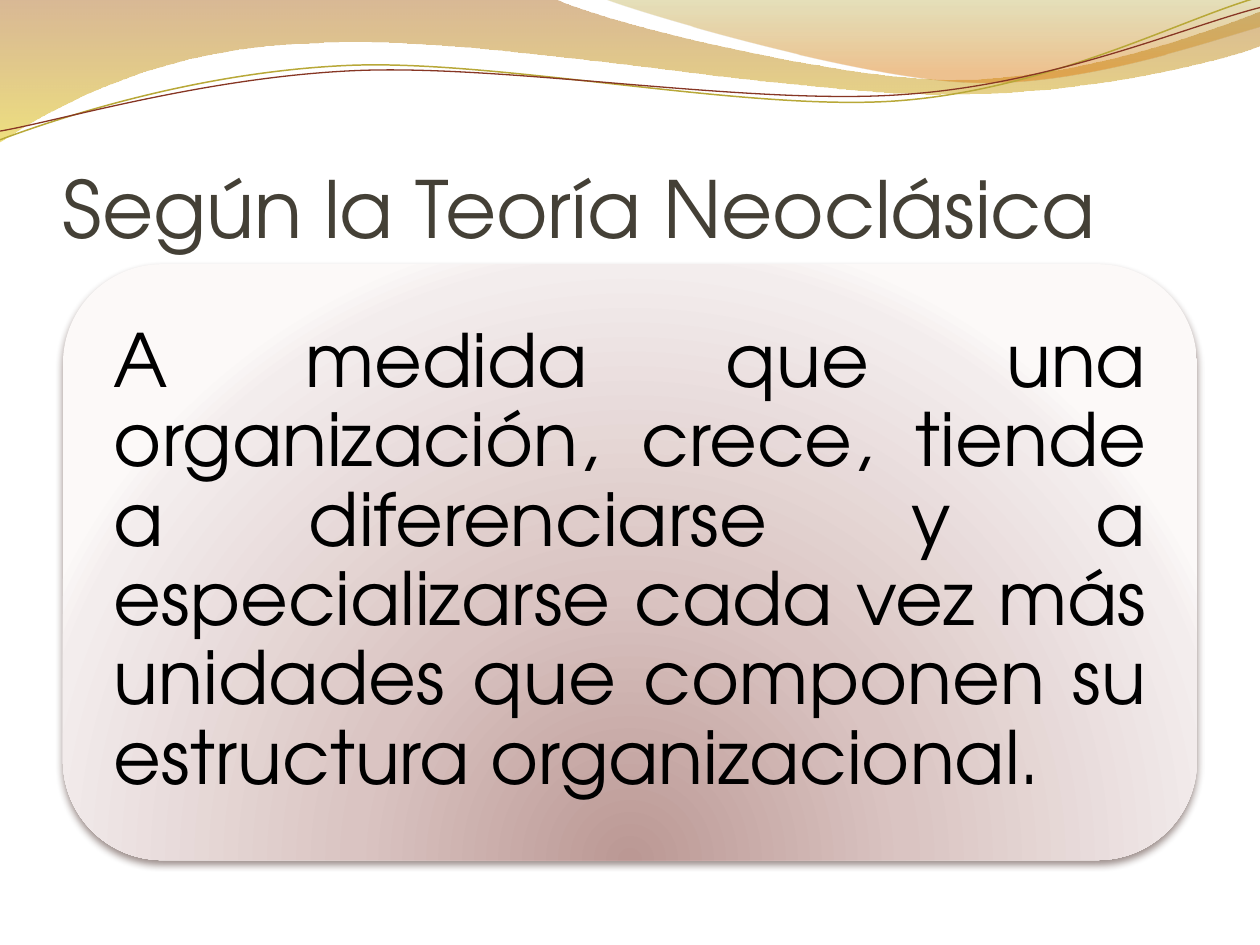
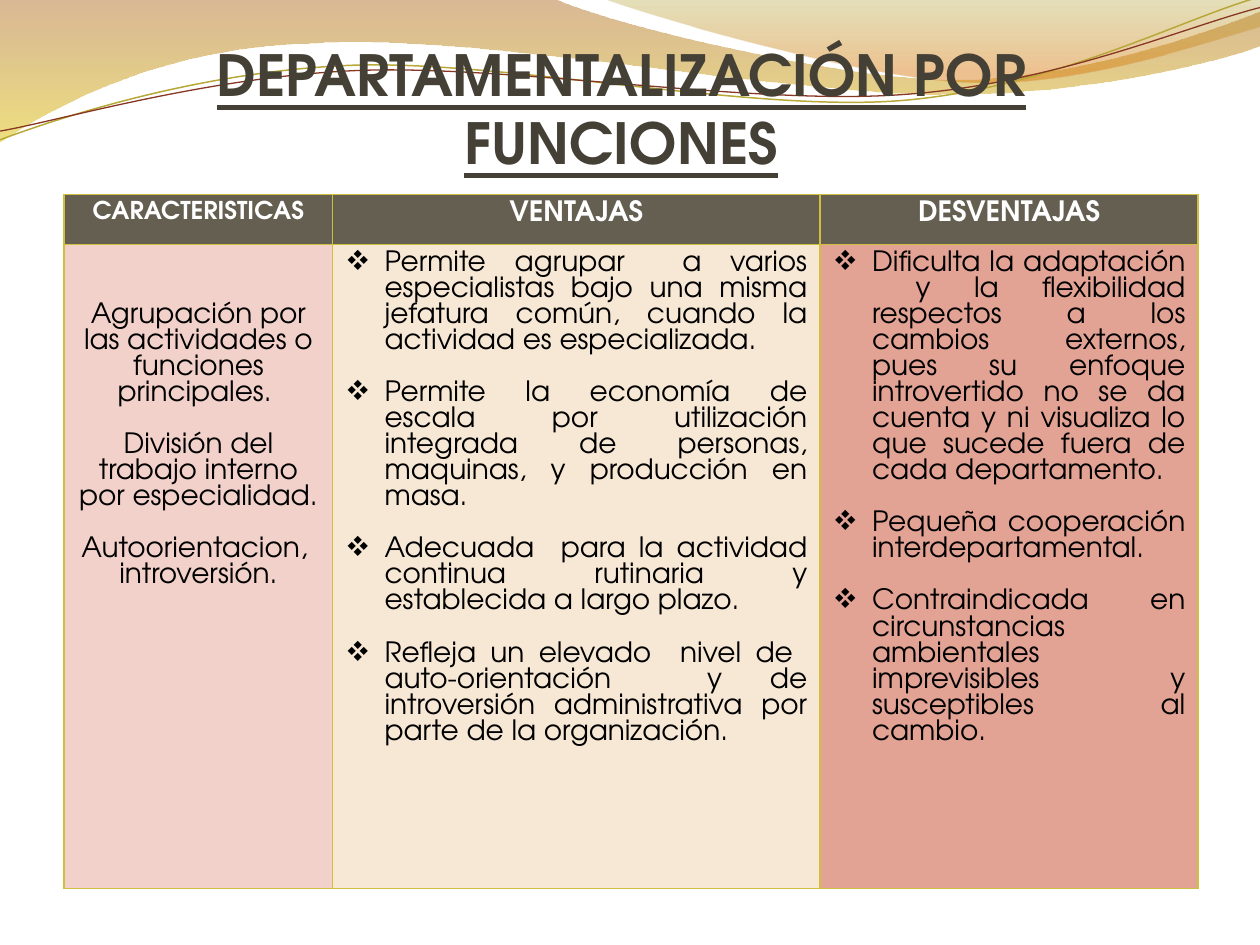
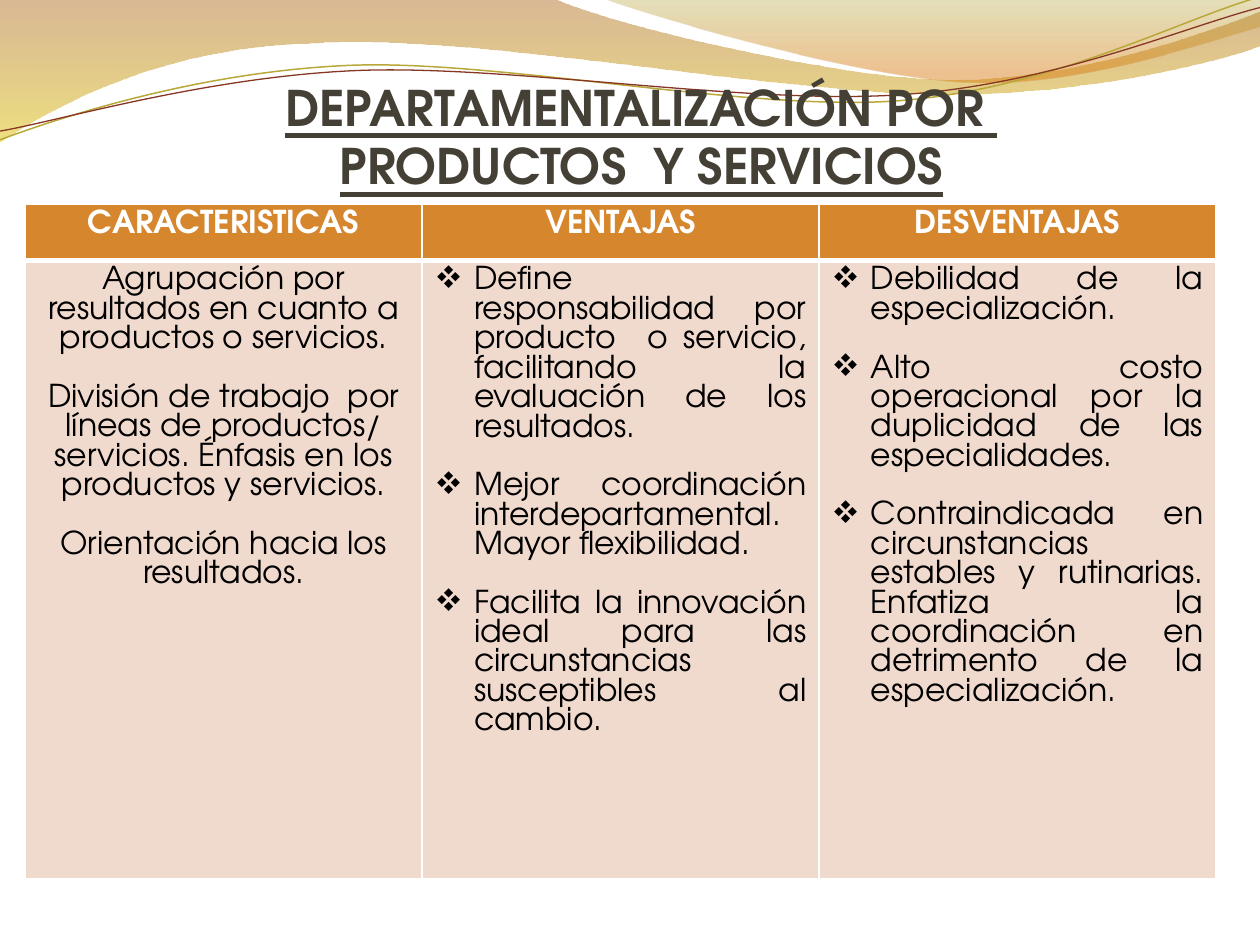
from lxml import etree
from pptx import Presentation
from pptx.dml.color import RGBColor
from pptx.enum import shapes, text
from pptx.oxml import ns
from pptx.util import Pt

FONT = "TeX Gyre Adventor"
COLORS = {
    "title": "444036", "body": "000000", "white": "FFFFFF",
    "wave_top": "AB6415", "wave_bottom": "E1C716",
    "crest_top": "AA991F", "crest_bottom": "DB780A",
    "gold_line": "B8A838", "red_line": "873624",
    "card_core": "BB9894", "card_mid": "DAC4C2",
    "card_pale": "F3EDED", "card_edge": "FCF9F8", "card_shadow": "30120C",
    "olive": "655F51", "olive_grid": "D0BE40",
    "pink": "F1D1C9", "cream": "F7E7D5", "coral": "E2A294",
    "orange": "D6862D", "peach": "F0D9CD",
}
CENTER, JUSTIFY = text.PP_ALIGN.CENTER, text.PP_ALIGN.JUSTIFY
BLANK_LINE = 0.93   # height of one table line, as a share of the font size
BULLET_INDENT = 22.5

# Wave outlines in points: a start, then line ends (2 numbers) or curves (6)
WAVE = [(0, 0), (316.8, -0.7),
        (342.7, 12.2, 478.1, 45.4, 545.8, 45.4),
        (614.2, 45.4, 689.8, 18.7, 720, 6.5), (720.7, 25.9),
        (707.8, 31.7, 626.4, 54.7, 537.1, 54),
        (447.8, 54, 275, 20.2, 185, 24.5),
        (92.9, 25.9, 33.1, 59.8, -0.7, 81.4)]
CREST = [(344.9, -0.7), (366.5, 7.9, 491, 44.6, 553.7, 46.8),
         (616.3, 49.7, 691.9, 23, 720, 15.1), (720, 0)]
GOLD_LINE = [(0, 79.9), (34.6, 67, 113.8, 41, 199.4, 37.4),
             (284.4, 33.8, 427, 64.1, 513.4, 57.6),
             (599.8, 51.1, 675.4, 10.8, 718.6, -1.4)]
RED_LINE = [(0, 74.9), (33.8, 69.1, 118.1, 43.9, 203.8, 40.3),
            (290.2, 36.7, 429.8, 60.5, 516.2, 54),
            (601.9, 48.2, 677.5, 15.1, 720, 4.3)]


def rgb(name):
    return RGBColor.from_string(COLORS[name])


def add_xml(parent, tag, **attributes):
    child = etree.SubElement(parent, ns.qn(tag))
    for key, value in attributes.items():
        child.set(key, str(value))
    return child


def add_color(parent, name, alpha=100):
    color = add_xml(parent, "a:srgbClr", val=COLORS[name])
    if alpha < 100:
        add_xml(color, "a:alpha", val=alpha * 1000)


def gradient_fill(shape, stops, center=None):
    """Fill from top to bottom, or outwards from a center (l, t, r, b)."""
    shape.fill.background()
    properties = shape._element.spPr
    gradient = etree.Element(ns.qn("a:gradFill"), rotWithShape="1")
    stop_list = add_xml(gradient, "a:gsLst")
    for position, color, alpha in stops:
        stop = add_xml(stop_list, "a:gs", pos=position * 1000)
        add_color(stop, color, alpha)
    if center:
        circle = add_xml(gradient, "a:path", path="circle")
        sides = {side: share * 1000 for side, share in zip("ltrb", center)}
        add_xml(circle, "a:fillToRect", **sides)
    else:
        add_xml(gradient, "a:lin", ang=5400000, scaled=0)
    properties.replace(properties.find(ns.qn("a:noFill")), gradient)


def add_outline(slide, outline, closed):
    """Build a freeform, then join each three curve points into a Bézier."""
    points = [(Pt(part[i]), Pt(part[i + 1]))
              for part in outline for i in range(0, len(part), 2)]
    builder = slide.shapes.build_freeform(*points[0])
    builder.add_line_segments(points[1:], close=closed)
    shape = builder.convert_to_shape()
    shape.shadow.inherit = False

    lines = iter(list(shape._element.spPr.iter(ns.qn("a:lnTo"))))
    for part in outline[1:]:
        ends = [next(lines) for _ in range(len(part) // 2)]
        if len(ends) == 3:
            curve = etree.Element(ns.qn("a:cubicBezTo"))
            ends[0].addprevious(curve)
            for end in ends:
                curve.append(end[0])
                end.getparent().remove(end)
    return shape


def add_waves(slide):
    """The band of waves at the top of each slide."""
    bands = ((WAVE, [(0, "wave_top", 45), (100, "wave_bottom", 55)]),
             (CREST, [(0, "crest_top", 30), (80, "crest_bottom", 45)]))
    for outline, stops in bands:
        band = add_outline(slide, outline, True)
        gradient_fill(band, stops)
        band.line.fill.background()
    for outline, color, width in ((GOLD_LINE, "gold_line", 0.85),
                                  (RED_LINE, "red_line", 0.75)):
        ripple = add_outline(slide, outline, False)
        ripple.fill.background()
        ripple.line.color.rgb = rgb(color)
        ripple.line.width = Pt(width)


def style(paragraph, size, color, bold=False, align=None):
    font = paragraph.font
    font.name, font.size, font.bold = FONT, Pt(size), bold
    font.color.rgb = rgb(color)
    paragraph.alignment = align


def add_text(slide, box, words, anchor, insets):
    frame = slide.shapes.add_textbox(*map(Pt, box)).text_frame
    frame.word_wrap = True
    frame.vertical_anchor = anchor
    (frame.margin_left, frame.margin_top,
     frame.margin_right, frame.margin_bottom) = map(Pt, insets)
    frame.text = words
    return frame.paragraphs[0]


def add_title(slide, left, top, words, size, heading=False, bottom=0):
    title = add_text(slide, (left, top, 648, 90), words,
                     text.MSO_ANCHOR.BOTTOM, (0, 3.6, 0, bottom))
    style(title, size, "title", heading, CENTER if heading else None)
    title.font.underline = heading


def add_card(slide, words):
    card = slide.shapes.add_shape(shapes.MSO_SHAPE.ROUNDED_RECTANGLE,
                                  Pt(36), Pt(151), Pt(648), Pt(340.5))
    gradient_fill(card, [(0, "card_core", 100), (43, "card_mid", 100),
                         (93, "card_pale", 100), (100, "card_edge", 100)],
                  center=(50, 130, 50, -30))
    card.line.fill.background()
    card.shadow.inherit = False
    effects = card._element.spPr.find(ns.qn("a:effectLst"))
    shadow = add_xml(effects, "a:outerShdw", blurRad=Pt(4.5), dist=Pt(3),
                     dir=5400000, rotWithShape=0)
    add_color(shadow, "card_shadow", 48)

    statement = add_text(slide, (52.6, 167.4, 614.9, 307.4), words,
                         text.MSO_ANCHOR.MIDDLE, [12.5] * 4)
    style(statement, 42, "body", align=JUSTIFY)
    statement.line_spacing = 0.9


def set_borders(cell, color, widths):
    properties = cell._tc.get_or_add_tcPr()
    for index, (side, width) in enumerate(zip("LRTB", widths)):
        line = add_xml(properties, f"a:ln{side}", w=Pt(width))
        add_color(add_xml(line, "a:solidFill"), color)
        properties.insert(index, line)


def add_bullet(paragraph):
    properties = paragraph._p.get_or_add_pPr()
    properties.set("marL", str(Pt(BULLET_INDENT)))
    properties.set("indent", str(-Pt(BULLET_INDENT)))
    # Wingdings draws this letter as ❖
    bullet_font = etree.Element(ns.qn("a:buFont"), typeface="Wingdings",
                                charset="2")
    properties.append(bullet_font)
    add_xml(properties, "a:buChar", char="v")


def fill_cell(cell, items, size, color, bold, bulleted):
    frame = cell.text_frame
    for index, item in enumerate(items):
        paragraph = frame.add_paragraph() if index else frame.paragraphs[0]
        paragraph.text = item
        style(paragraph, size, color, bold, JUSTIFY if bulleted else CENTER)
        if index < len(items) - 1:
            paragraph.space_after = Pt(round(size * BLANK_LINE, 1))
        if bulleted:
            add_bullet(paragraph)


def add_comparison(slide, corner, widths, heights, columns, size, header_sizes,
                   header_fill, body_fills, grid, rule=1):
    """Features, advantages and drawbacks, one column each."""
    frame = slide.shapes.add_table(2, len(columns), *map(Pt, corner),
                                   Pt(sum(widths)), Pt(sum(heights)))
    table = frame.table
    table.first_row = table.horz_banding = False
    for row, height in zip(table.rows, heights):
        row.height = Pt(height)
    headings = ("CARACTERISTICAS", "VENTAJAS", "DESVENTAJAS")
    for index, items in enumerate(columns):
        table.columns[index].width = Pt(widths[index])
        header, body = table.cell(0, index), table.cell(1, index)
        fill_cell(header, [headings[index]], header_sizes[index],
                  "white", True, False)
        fill_cell(body, items, size, "body", False, index > 0)
        for cell, fill, borders in (
                (header, header_fill, (1, 1, 1, rule)),
                (body, body_fills[index], (1, 1, rule, 1))):
            cell.fill.solid()
            cell.fill.fore_color.rgb = rgb(fill)
            set_borders(cell, grid, borders)
    return table


FUNCTIONS = [
    ["Agrupación por las actividades o funciones principales. ",
     "División del trabajo interno por especialidad.",
     "Autoorientacion,  introversión."],
    ["Permite agrupar  a varios especialistas bajo una misma jefatura común, "
     "cuando la actividad es especializada.",
     "Permite la economía de escala por utilización integrada de personas, "
     "maquinas, y producción en masa.",
     "Adecuada  para la actividad continua rutinaria y establecida a largo "
     "plazo.",
     "Refleja un elevado  nivel de  auto-orientación  y de introversión "
     "administrativa por parte de la organización."],
    ["Dificulta la adaptación  y la flexibilidad respectos a los cambios  "
     "externos, pues su enfoque introvertido no se da cuenta y ni visualiza "
     "lo que sucede fuera de cada departamento.",
     "Pequeña cooperación interdepartamental.",
     "Contraindicada en circunstancias ambientales imprevisibles y "
     "susceptibles al cambio."],
]
PRODUCTS = [
    ["Agrupación por resultados en cuanto a productos o servicios.",
     "División de trabajo  por líneas de productos/ servicios. Énfasis en los "
     "productos y servicios.",
     "Orientación hacia los resultados."],
    ["Define responsabilidad por producto  o servicio, facilitando la "
     "evaluación de los resultados.",
     "Mejor  coordinación interdepartamental. Mayor flexibilidad.",
     "Facilita la innovación ideal para las circunstancias susceptibles al "
     "cambio."],
    ["Debilidad de la especialización.",
     "Alto costo operacional por la duplicidad de las especialidades.",
     "Contraindicada en circunstancias estables y rutinarias. Enfatiza la "
     "coordinación en detrimento de la especialización."],
]


def main():
    deck = Presentation()
    deck.slide_width, deck.slide_height = Pt(720), Pt(540)
    theory, functions, products = (
        deck.slides.add_slide(deck.slide_layouts[6]) for _ in range(3))
    for slide in (theory, functions, products):
        add_waves(slide)

    # Neoclassical theory
    add_title(theory, 36, 55.4, "Según la Teoría Neoclásica", 45)
    add_card(theory, "A medida que una organización, crece, tiende a "
             "diferenciarse y a especializarse cada vez más unidades que "
             "componen su estructura organizacional.")

    # Departments by function
    add_title(functions, 31, 49.7, "DEPARTAMENTALIZACIÓN POR FUNCIONES",
              32.4, heading=True, bottom=39.2)
    table = add_comparison(
        functions, (36.7, 111.3), (153.4, 278.6, 216), (28.4, 368), FUNCTIONS,
        16, (14, 16, 16), "olive", ("pink", "cream", "coral"), "olive_grid")
    table.cell(1, 0).margin_top = Pt(3.6 + 2 * 16 * BLANK_LINE)

    # Departments by product and service
    add_title(products, 42.5, 21.3,
              "DEPARTAMENTALIZACIÓN POR \vPRODUCTOS  Y SERVICIOS",
              28, heading=True)
    add_comparison(
        products, (14.4, 116.8), [226.8] * 3, (32, 353.2), PRODUCTS,
        18, [18] * 3, "orange", ["peach"] * 3, "white", rule=3)

    deck.save("out.pptx")


if __name__ == "__main__":
    main()
